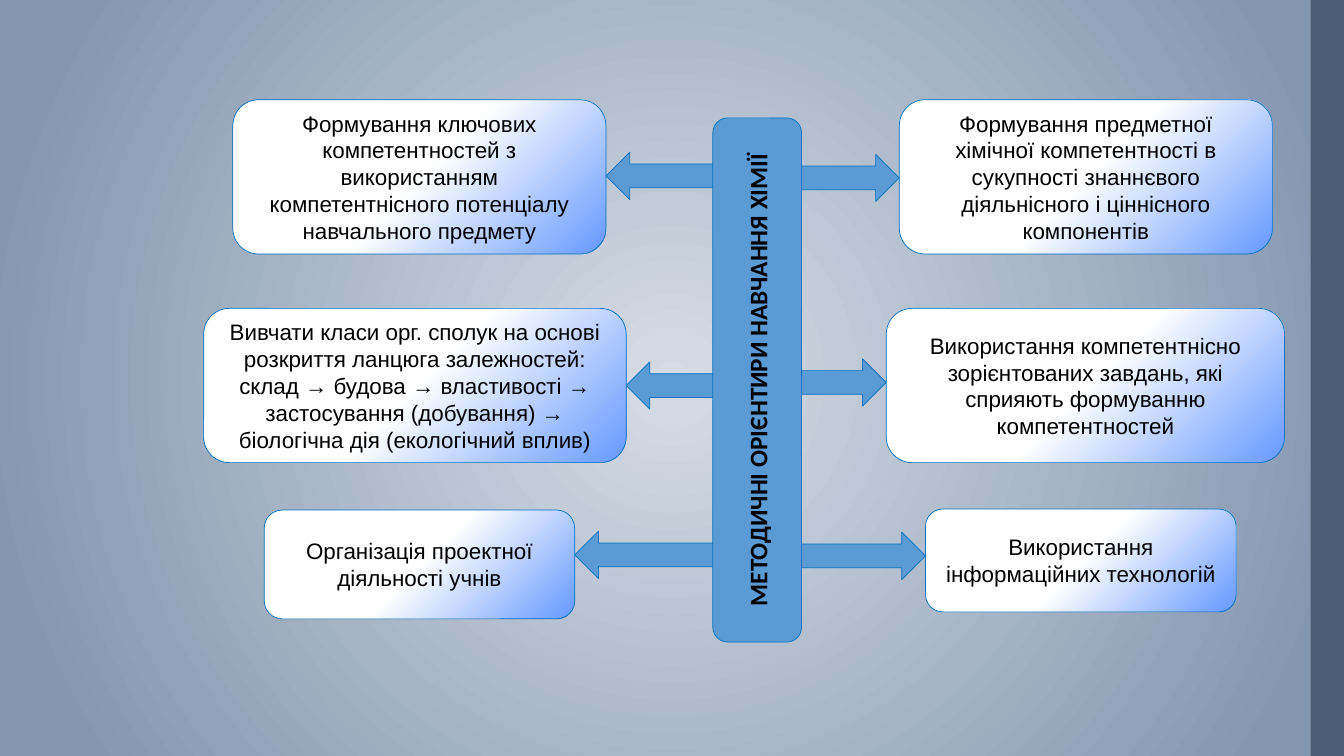
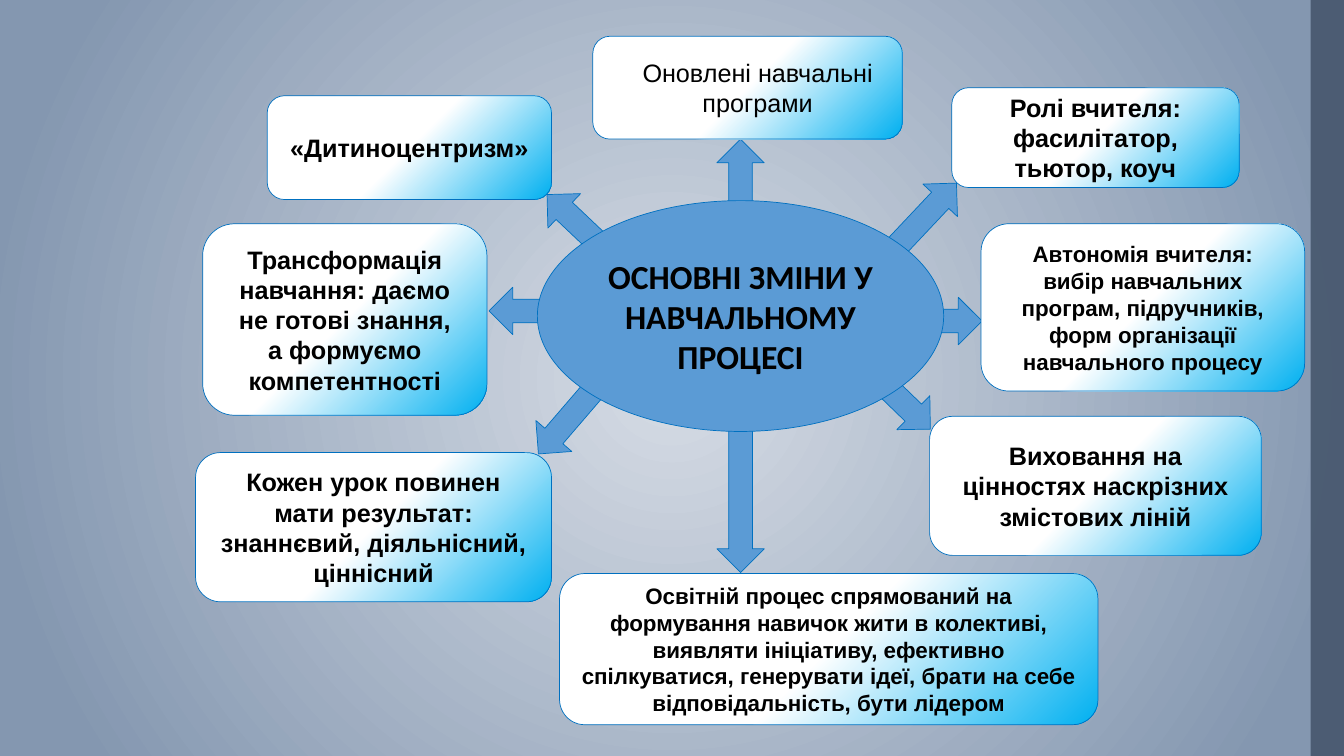
"""Build two slides of diagrams about teaching chemistry and changes in schooling."""
from dataclasses import dataclass

from lxml import etree
from pptx import Presentation
from pptx.dml.color import RGBColor
from pptx.enum.shapes import MSO_SHAPE
from pptx.enum.text import MSO_ANCHOR, PP_ALIGN
from pptx.oxml.ns import qn
from pptx.util import Inches, Pt

RECTANGLE = MSO_SHAPE.RECTANGLE
ROUNDED = MSO_SHAPE.ROUNDED_RECTANGLE
ELLIPSE = MSO_SHAPE.OVAL
ARROW = MSO_SHAPE.RIGHT_ARROW
MIDDLE = MSO_ANCHOR.MIDDLE
CENTER = PP_ALIGN.CENTER


@dataclass(frozen=True)
class Theme:
    background: tuple = ((0, "D6DCE5"), (90, "8497B0"))
    violet_card: tuple = ((0, "6699FF"), (50, "FFFFFF"), (100, "FFFFFF"))
    cyan_card: tuple = ((0, "00B0F0"), (50, "FFFFFF"), (100, "FFFFFF"))
    band: str = "44546A"
    band_opacity: int = 87
    accent: str = "5B9BD5"
    outline: str = "0070C0"
    text: str = "000000"
    body_font: str = "Arial"
    hub_font: str = "Calibri"
    small: int = 16
    medium: int = 18
    large: int = 24
    outline_width: float = 0.5
    arrow_height: float = 0.47


class Deck:
    def __init__(self, theme):
        self.theme = theme
        self.presentation = Presentation()
        self.presentation.slide_width = Inches(13.33)
        self.presentation.slide_height = Inches(7.5)
        self.slide = None

    def new_slide(self):
        self.slide = self.presentation.slides.add_slide(self.presentation.slide_layouts[6])
        self.slide.background.fill.gradient()
        center = {"l": 50, "t": 50, "r": 50, "b": 50}
        self.radial(self.slide, self.theme.background, center)
        band = self.shape(RECTANGLE, (13, 0, 0.33, 7.5), self.theme.band)
        band.line.fill.background()
        color = band._element.find(".//" + qn("a:srgbClr"))
        etree.SubElement(color, qn("a:alpha"), val=str(self.theme.band_opacity * 1000))

    def radial(self, owner, stops, focus, tile=None):
        gradient = owner._element.find(".//" + qn("a:gradFill"))
        for child in list(gradient):
            gradient.remove(child)
        stop_list = etree.SubElement(gradient, qn("a:gsLst"))
        for position, color in stops:
            stop = etree.SubElement(stop_list, qn("a:gs"), pos=str(position * 1000))
            etree.SubElement(stop, qn("a:srgbClr"), val=color)
        circle = etree.SubElement(gradient, qn("a:path"), {"path": "circle"})
        for parent, tag, sides in ((circle, "a:fillToRect", focus), (gradient, "a:tileRect", tile)):
            if sides:
                values = {side: str(percent * 1000) for side, percent in sides.items()}
                etree.SubElement(parent, qn(tag), values)

    def shape(self, kind, box, color):
        shape = self.slide.shapes.add_shape(kind, *map(Inches, box))
        shape.shadow.inherit = False
        shape.fill.solid()
        shape.fill.fore_color.rgb = RGBColor.from_string(color)
        shape.line.color.rgb = RGBColor.from_string(self.theme.outline)
        shape.line.width = Pt(self.theme.outline_width)
        return shape

    def set_text(self, shape, text, font, size, bold):
        frame = shape.text_frame
        frame.word_wrap = True
        frame.vertical_anchor = MIDDLE
        frame.text = text
        for paragraph in frame.paragraphs:
            paragraph.alignment = CENTER
            paragraph.font.name = font
            paragraph.font.size = Pt(size)
            paragraph.font.bold = bold
            paragraph.font.color.rgb = RGBColor.from_string(self.theme.text)

    def arrow(self, left, top, length, angle=0):
        box = (left, top, length, self.theme.arrow_height)
        self.shape(ARROW, box, self.theme.accent).rotation = angle

    def card(self, box, text, stops, size, bold=False, indent=0):
        shape = self.shape(ROUNDED, box, self.theme.accent)
        shape.fill.gradient()
        self.radial(shape, stops, {"l": 100, "t": 100}, {"r": -100, "b": -100})
        self.set_text(shape, text, self.theme.body_font, size, bold)
        if indent:
            properties = shape.text_frame.paragraphs[0]._p.get_or_add_pPr()
            properties.set("marL", str(Inches(indent)))

    def hub(self, kind, box, text, size, vertical=False):
        shape = self.shape(kind, box, self.theme.accent)
        self.set_text(shape, text, self.theme.hub_font, size, True)
        if vertical:
            shape._element.find(".//" + qn("a:bodyPr")).set("vert", "vert270")


def add_guidelines(deck):
    theme = deck.theme
    spine = (7.07, 1.17, 0.88, 5.2)
    spine_center = spine[0] + spine[2] / 2
    cards = [
        ((8.92, 0.99, 3.7, 1.53), 1.53,
         "Формування предметної хімічної компетентності в сукупності знаннєвого "
         "діяльнісного і ціннісного компонентів"),
        ((2.31, 0.99, 3.7, 1.53), 1.51,
         "Формування ключових компетентностей з використанням компетентнісного "
         "потенціалу навчального предмету"),
        ((2.02, 3.06, 4.19, 1.53), 3.59,
         "Вивчати класи орг. сполук на основі розкриття ланцюга залежностей: "
         "склад → будова → властивості → застосування (добування) → "
         "біологічна дія (екологічний вплив)"),
        ((8.79, 3.06, 3.95, 1.53), 3.56,
         "Використання компетентнісно зорієнтованих завдань, які сприяють "
         "формуванню компетентностей"),
        ((9.18, 5.05, 3.08, 1.02), 5.28, "Використання інформаційних технологій"),
        ((2.62, 5.06, 3.08, 1.08), 5.27, "Організація проектної діяльності учнів"),
    ]
    deck.new_slide()
    for (left, _, width, _), arrow_top, _ in cards:
        if left > spine_center:
            deck.arrow(spine_center, arrow_top, left - spine_center)
        else:
            tip = left + width
            deck.arrow(tip, arrow_top, spine_center - tip, 180)
    for box, _, text in cards:
        deck.card(box, text, theme.violet_card, theme.small)
    deck.hub(ROUNDED, spine, "МЕТОДИЧНІ ОРІЄНТИРИ НАВЧАННЯ ХІМІЇ", theme.medium, vertical=True)


def add_changes(deck):
    theme = deck.theme
    arrows = [
        (8.61, 1.96, 1.04, 313.3),
        (6.96, 1.53, 0.77, 270),
        (5.32, 1.96, 0.77, 223.5),
        (4.85, 2.85, 0.7, 180),
        (5.18, 3.92, 0.92, 130.7),
        (6.57, 4.67, 1.55, 90),
        (8.48, 3.72, 0.87, 44.1),
        (9.13, 2.95, 0.61, 0),
    ]
    cards = [
        ((2.01, 2.22, 2.82, 1.9), theme.medium,
         "Трансформація навчання: даємо не готові знання,\nа формуємо компетентності"),
        ((2.65, 0.95, 2.82, 1.03), theme.medium, "«Дитиноцентризм»"),
        ((9.22, 4.13, 3.29, 1.38), theme.medium,
         "Виховання на цінностях наскрізних змістових ліній"),
        ((1.94, 4.49, 3.53, 1.48), theme.medium,
         "Кожен урок повинен мати результат:\nзнаннєвий, діяльнісний, ціннісний"),
        ((9.44, 0.87, 2.85, 0.99), theme.medium, "Ролі вчителя: фасилітатор, тьютор, коуч"),
        ((9.73, 2.22, 3.21, 1.66), theme.small,
         "Автономія вчителя:\nвибір навчальних програм, підручників, форм організації "
         "навчального процесу"),
        ((5.55, 5.69, 5.34, 1.5), theme.small,
         "Освітній процес спрямований на формування навичок жити в колективі, "
         "виявляти ініціативу, ефективно спілкуватися, генерувати ідеї, "
         "брати на себе відповідальність, бути лідером"),
    ]
    deck.new_slide()
    for arrow in arrows:
        deck.arrow(*arrow)
    deck.card((5.88, 0.36, 3.07, 1.02), "Оновлені навчальні програми",
              theme.cyan_card, theme.medium, indent=0.2)
    for box, size, text in cards:
        deck.card(box, text, theme.cyan_card, size, bold=True)
    deck.hub(ELLIPSE, (5.33, 1.99, 4.03, 2.29), "ОСНОВНІ ЗМІНИ У НАВЧАЛЬНОМУ ПРОЦЕСІ", theme.large)


def main():
    deck = Deck(Theme())
    add_guidelines(deck)
    add_changes(deck)
    deck.presentation.save("out.pptx")


if __name__ == "__main__":
    main()
